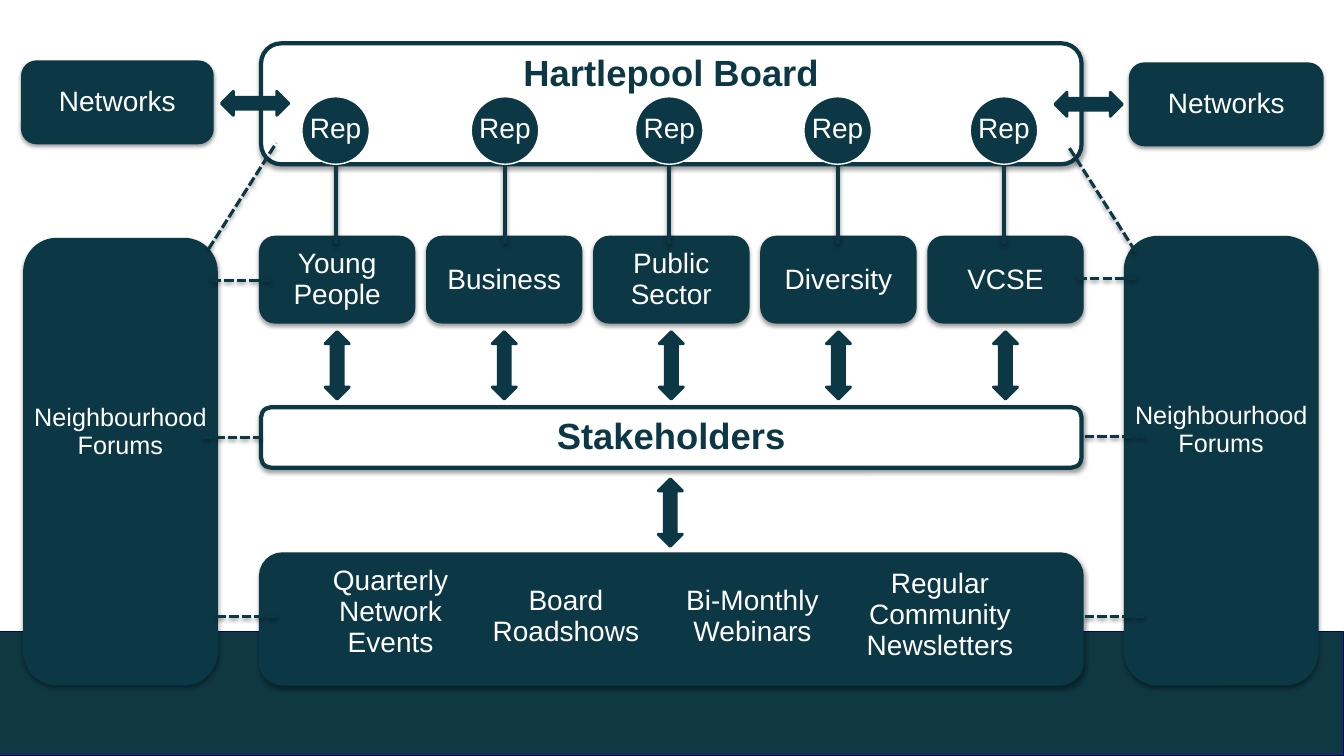
from lxml.etree import SubElement
from pptx import Presentation
from pptx.dml.color import RGBColor
from pptx.enum.dml import MSO_LINE
from pptx.enum.shapes import MSO_CONNECTOR, MSO_SHAPE as Shape
from pptx.enum.text import MSO_ANCHOR as Anchor, MSO_AUTO_SIZE as AutoSize, PP_ALIGN
from pptx.oxml.ns import qn
from pptx.util import Inches, Pt

COLORS = {"teal": "0C3745", "band": "0F3843", "navy": "000080", "white": "FFFFFF", "shadow": "000000"}
COLUMNS, ROWS = 133.33, 75
CENTRE_LEFT, CENTRE_WIDTH = 25.9, 81.4
SECTORS = ["Young People", "Business", "Public Sector", "Diversity", "VCSE"]
SECTOR_WIDTH = 15.1
SECTOR_STEP = (CENTRE_WIDTH - SECTOR_WIDTH) / (len(SECTORS) - 1)
STEMS = [33.3, 50.1, 66.4, 83.1, 99.6]
REP_SIZE = 6.7
ARROW_WIDTH, ARROW_HEIGHT = 2.4, 6.7
NETWORKS = [(2.3, 6.2, 18.7), (112.2, 6.4, 18.9)]
NETWORK_ARROWS = [(25.3, 10.25), (108, 10.35)]
FORUMS = [(2.5, 23.8, 44, 39.6), (111.7, 23.6, 44.2, 39.4)]
FORUM_WIDTH = 18.9
DASHES = [
    (20.7, 24.7, 27.4, 14.2), (106.1, 14.7, 112.8, 25.2),
    (21, 27.8, 26.9, 27.8), (106.9, 27.6, 112.8, 27.6),
    (20.1, 43.4, 26, 43.4), (107.6, 43.3, 113.6, 43.3),
    (21.5, 61.2, 27.4, 61.2), (107.6, 61.2, 113.6, 61.2),
]
ACTIVITIES = [
    ("Quarterly\nNetwork\nEvents", 32, 55.6, 13.5, 11.1),
    ("Board\nRoadshows", 47.8, 57.6, 16.7, 7.7),
    ("Bi-Monthly\nWebinars", 67, 57.6, 15.3, 7.7),
    ("Regular\nCommunity\nNewsletters", 84.9, 55.9, 16.7, 11.1),
]


def cells(*counts):
    return [Inches(count / 10) for count in counts]


def color(name):
    return RGBColor.from_string(COLORS[name])


def set_effects(item, shadowed):
    effects = SubElement(item._element.spPr, qn("a:effectLst"))
    if shadowed:
        shadow = SubElement(effects, qn("a:outerShdw"), blurRad="39400", dist="20300",
                            dir="5400000", rotWithShape="0")
        tint = SubElement(shadow, qn("a:srgbClr"), val=COLORS["shadow"])
        SubElement(tint, qn("a:alpha"), val="38000")


def write(item, text, size, ink="white", bold=False):
    item.text_frame.text = text
    for para in item.text_frame.paragraphs:
        para.alignment = PP_ALIGN.CENTER
        para.line_spacing = 0.93
        for span in para.runs:
            span.font.name = "Arial"
            span.font.size = Pt(size)
            span.font.bold = bold
            span.font.color.rgb = color(ink)


def add_block(page, kind, area, fill="teal", line="teal", weight=3, shadowed=False):
    block = page.shapes.add_shape(kind, *cells(*area))
    block.fill.solid()
    block.fill.fore_color.rgb = color(fill)
    block.line.color.rgb = color(line)
    block.line.width = Pt(weight)
    set_effects(block, shadowed)
    return block


def add_panel(page, area, text="", size=20, fill="teal", ink="white", anchor=Anchor.MIDDLE):
    panel = add_block(page, Shape.ROUNDED_RECTANGLE, area, fill, shadowed=True)
    panel.text_frame.vertical_anchor = anchor
    if text:
        write(panel, text, size, ink, bold=ink == "teal")


def add_arrow(page, middle_x, middle_y, rotation=0):
    area = (middle_x - ARROW_WIDTH / 2, middle_y - ARROW_HEIGHT / 2, ARROW_WIDTH, ARROW_HEIGHT)
    arrow = add_block(page, Shape.UP_DOWN_ARROW, area, weight=2)
    arrow.rotation = rotation


def add_link(page, ends, weight=3, dash=None):
    link = page.shapes.add_connector(MSO_CONNECTOR.STRAIGHT, *cells(*ends))
    link.line.color.rgb = color("teal")
    link.line.width = Pt(weight)
    if dash:
        link.line.dash_style = dash
    set_effects(link, True)


def add_label(page, text, area, size=20):
    box = page.shapes.add_textbox(*cells(*area))
    box.text_frame.word_wrap = False
    box.text_frame.auto_size = AutoSize.SHAPE_TO_FIT_TEXT
    write(box, text, size)


def add_rep(page, middle_x):
    area = (middle_x - REP_SIZE / 2, 9.6, REP_SIZE, REP_SIZE)
    rep = add_block(page, Shape.OVAL, area, line="white", weight=1)
    rep.text_frame.word_wrap = False
    rep.text_frame.vertical_anchor = Anchor.MIDDLE
    rep.text_frame.margin_bottom = Inches(0.08)
    write(rep, "Rep", 20)


def main():
    deck = Presentation()
    deck.slide_width, deck.slide_height = cells(COLUMNS, ROWS)
    page = deck.slides.add_slide(deck.slide_layouts[6])

    add_block(page, Shape.RECTANGLE, (0, 62.7, COLUMNS, 12.3), "band", "navy", 0.75)
    add_panel(page, (CENTRE_LEFT, 4.3, CENTRE_WIDTH, 12), "Hartlepool Board", 26,
              "white", "teal", Anchor.TOP)
    for index, (sector, stem) in enumerate(zip(SECTORS, STEMS)):
        left = CENTRE_LEFT + index * SECTOR_STEP
        add_panel(page, (left, 23.6, SECTOR_WIDTH, 8.3), sector)
        add_link(page, (stem, 15.5, stem, 24.2))
        add_rep(page, stem)
        add_arrow(page, left + SECTOR_WIDTH / 2, 36.25)

    add_panel(page, (CENTRE_LEFT, 40.4, CENTRE_WIDTH, 6), "Stakeholders", 26, "white", "teal")
    add_arrow(page, 66.5, 50.85)
    add_panel(page, (CENTRE_LEFT, 55, CENTRE_WIDTH, 12.8))
    for text, *area in ACTIVITIES:
        add_label(page, text, area)

    for left, top, width in NETWORKS:
        add_panel(page, (left, top, width, 7.9), "Networks")
    for middle_x, middle_y in NETWORK_ARROWS:
        add_arrow(page, middle_x, middle_y, 90)

    for left, top, height, label_top in FORUMS:
        add_panel(page, (left, top, FORUM_WIDTH, height))
        add_label(page, "Neighbourhood\nForums", (left - 0.2, label_top, 19.3, 7.1), 18)
    for ends in DASHES:
        add_link(page, ends, 2.25, MSO_LINE.SQUARE_DOT)

    deck.save("out.pptx")


if __name__ == "__main__":
    main()
